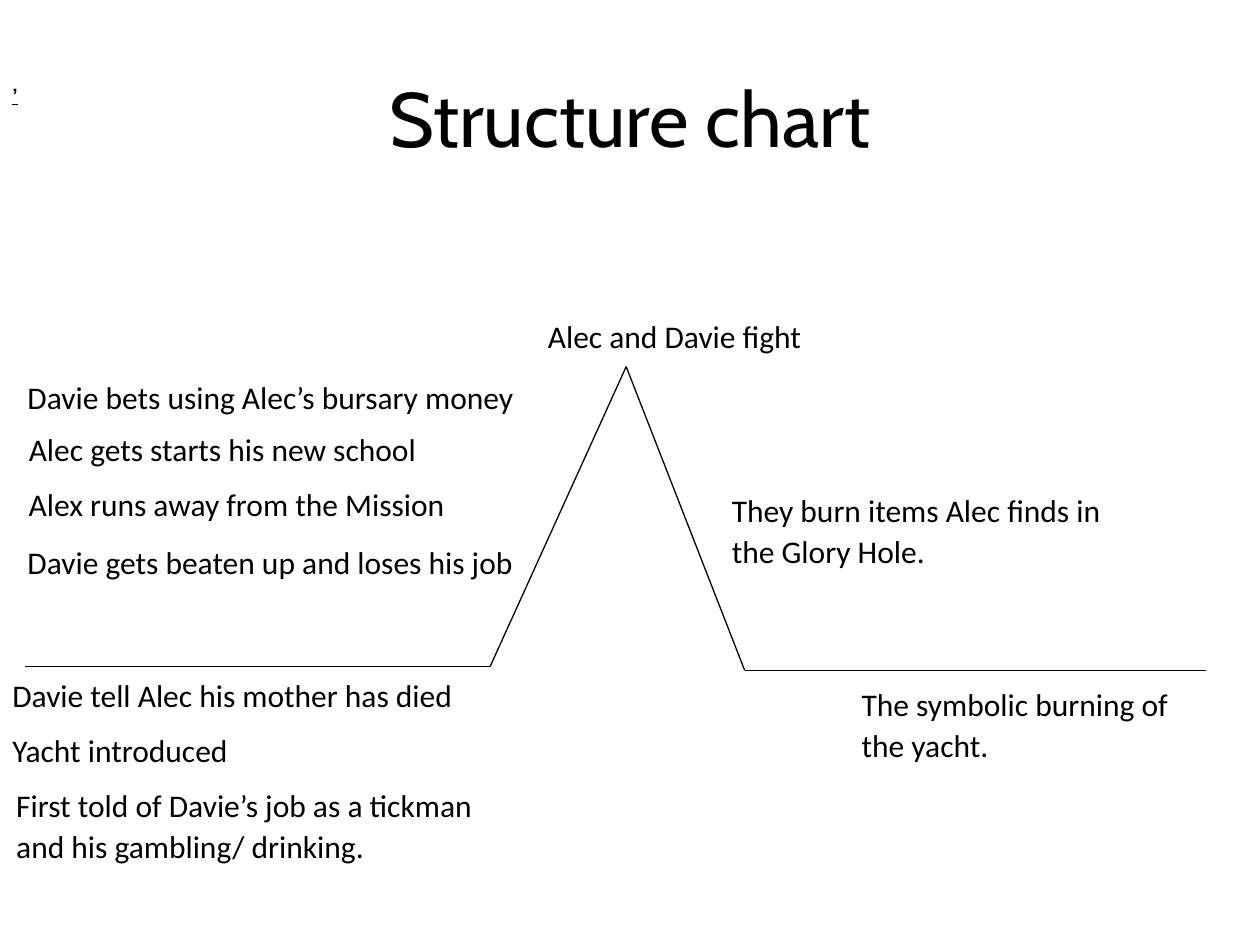
from lxml import etree
from pptx import Presentation
from pptx.dml.color import RGBColor
from pptx.enum.shapes import MSO_CONNECTOR
from pptx.enum.text import MSO_ANCHOR, MSO_AUTO_SIZE, PP_ALIGN
from pptx.oxml.ns import qn
from pptx.util import Inches, Pt

STRAIGHT = MSO_CONNECTOR.STRAIGHT
TOP, MIDDLE = MSO_ANCHOR.TOP, MSO_ANCHOR.MIDDLE
LEFT, CENTER = PP_ALIGN.LEFT, PP_ALIGN.CENTER
FIT_SHAPE, NO_FIT = MSO_AUTO_SIZE.SHAPE_TO_FIT_TEXT, MSO_AUTO_SIZE.NONE
BLACK = RGBColor(0x00, 0x00, 0x00)

prs = Presentation()
prs.slide_width, prs.slide_height = Inches(10), Inches(7.5)
s = prs.slides.add_slide(prs.slide_layouts[6])

# Grid of 100 columns by 75 rows
COL = prs.slide_width / 100
ROW = prs.slide_height / 75


def add_text(text, x, y, w, h, font="Calibri", size=18, bold=False, underline=False,
             align=LEFT, anchor=TOP, wrap=False, fit=FIT_SHAPE, spacing=None, after=0):
    box = s.shapes.add_textbox(round(x * COL), round(y * ROW), round(w * COL), round(h * ROW))
    tf = box.text_frame
    tf.word_wrap, tf.auto_size, tf.vertical_anchor = wrap, fit, anchor
    p = tf.paragraphs[0]
    p.alignment, p.line_spacing, p.space_after = align, spacing, Pt(after)
    r = p.add_run()
    r.text = text
    r.font.name, r.font.size = font, Pt(size)
    r.font.bold, r.font.underline = bold, underline
    r.font.color.rgb = BLACK


# Title
add_text("Structure chart", 5, 3, 90, 12.5, font="Cabin", size=44,
         align=CENTER, anchor=MIDDLE, wrap=True, fit=NO_FIT)

# Plot line: opening, rise, fall, ending
plot_points = [(2, 52.9), (38.9, 52.9), (49.7, 29.1), (59.1, 53.2), (95.7, 53.2)]
for (x1, y1), (x2, y2) in zip(plot_points, plot_points[1:]):
    line = s.shapes.add_connector(STRAIGHT, round(x1 * COL), round(y1 * ROW),
                                  round(x2 * COL), round(y2 * ROW))
    line.line.color.rgb = BLACK
    line.line.width = Pt(0.75)
    etree.SubElement(line._element.spPr, qn("a:effectLst"))

# Stray mark beside the title
add_text("’", 0, 6.1, 2.4, 2.9, font="Arial", size=11, bold=True, underline=True, anchor=MIDDLE)

# Opening events, single spaced
add_text("Davie tell Alec his mother has died", 0, 53.2, 37.4, 4)
add_text("Yacht introduced", 0, 57.5, 19.3, 4)

# Events on one line
one_line_events = [
    ("Davie gets beaten up and loses his job", 1.2, 42.4, 41),
    ("Alex runs away from the Mission", 1.3, 37.8, 35.4),
    ("Alec gets starts his new school", 1.3, 33.4, 33.1),
    ("Davie bets using Alec’s bursary money", 1.2, 29.3, 41),
    ("Alec and Davie fight", 42.5, 24.5, 22.4),
]
for text, x, y, w in one_line_events:
    add_text(text, x, y, w, 4.3, spacing=1.07, after=8)

# Events wrapped over two lines
wrapped_events = [
    ("First told of Davie’s job as a tickman and his gambling/ drinking.", 0.3, 61.7, 40.2),
    ("They burn items Alec finds in the Glory Hole.", 57.1, 38.3, 33.4),
    ("The symbolic burning of the yacht.", 67.4, 53.7, 28.3),
]
for text, x, y, w in wrapped_events:
    add_text(text, x, y, w, 7.5, wrap=True, spacing=1.07, after=8)

prs.save("out.pptx")
